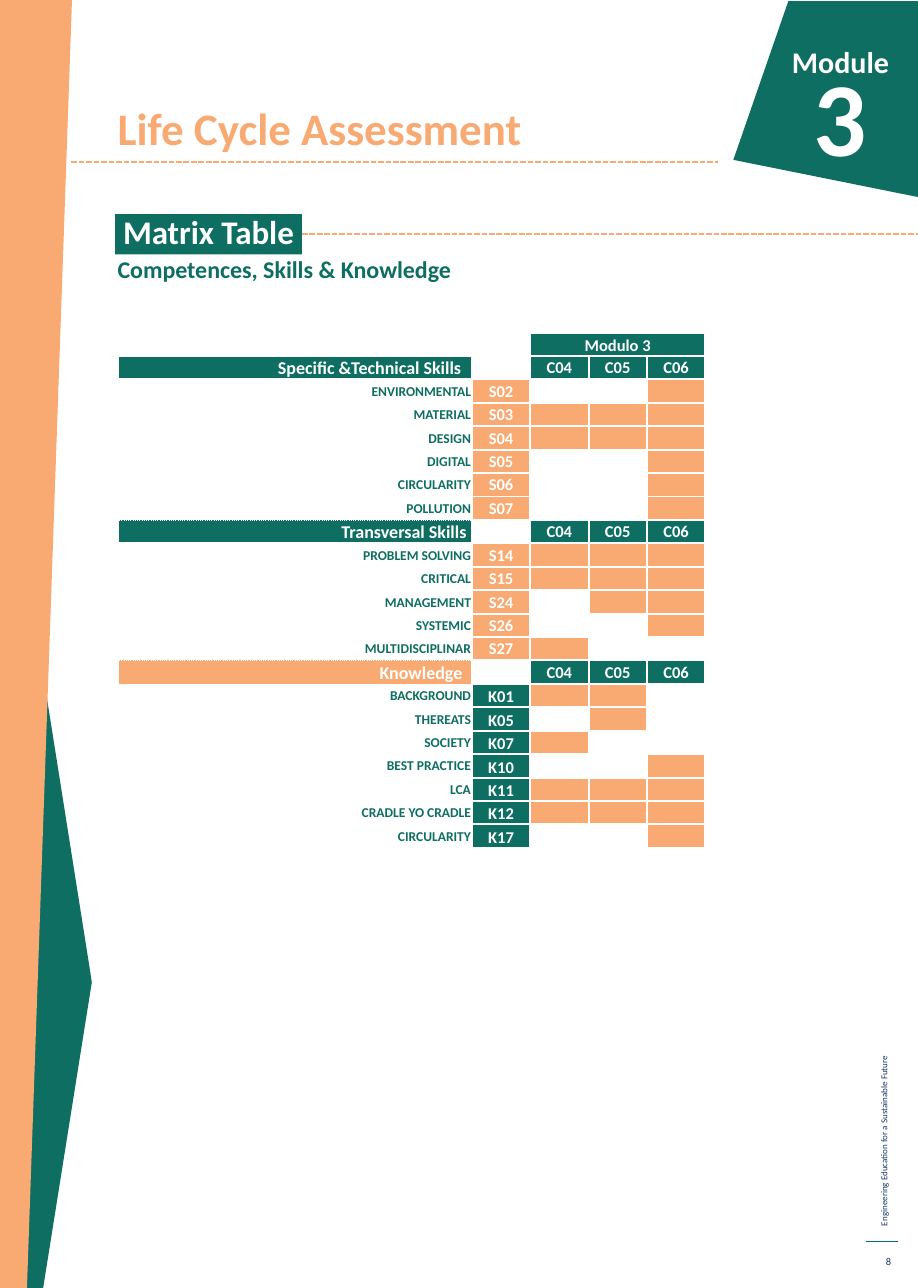
from lxml import etree
from pptx import Presentation
from pptx import util as u
from pptx.dml.color import RGBColor
from pptx.enum import dml, shapes, text
from pptx.oxml import ns

Pt = u.Pt
GREEN = RGBColor(0x0E, 0x6E, 0x61)
ORANGE = RGBColor(0xF9, 0xAA, 0x73)
NAVY = RGBColor(0x1A, 0x39, 0x66)
WHITE = RGBColor(0xFF, 0xFF, 0xFF)
LEFT, CENTER, RIGHT = text.PP_ALIGN.LEFT, text.PP_ALIGN.CENTER, text.PP_ALIGN.RIGHT
TOP, MIDDLE, BOTTOM = text.MSO_ANCHOR.TOP, text.MSO_ANCHOR.MIDDLE, text.MSO_ANCHOR.BOTTOM

COMPETENCES = ["C04", "C05", "C06"]
# Heading, right margin, heading fill, code fill, code anchor, then
# (label, code, one mark per competence: x is covered).
SECTIONS = [
    ("Specific &Technical Skills", 7, GREEN, ORANGE, MIDDLE, [
        ("ENVIRONMENTAL", "S02", "--x"), ("MATERIAL", "S03", "xxx"),
        ("DESIGN", "S04", "xxx"), ("DIGITAL", "S05", "--x"),
        ("CIRCULARITY", "S06", "--x"), ("POLLUTION", "S07", "--x")]),
    ("Transversal Skills", 3.5, GREEN, ORANGE, MIDDLE, [
        ("PROBLEM SOLVING", "S14", "xxx"), ("CRITICAL", "S15", "xxx"),
        ("MANAGEMENT", "S24", "-xx"), ("SYSTEMIC", "S26", "--x"),
        ("MULTIDISCIPLINAR", "S27", "x--")]),
    ("Knowledge", 6.3, ORANGE, GREEN, BOTTOM, [
        ("BACKGROUND", "K01", "xx-"), ("THEREATS", "K05", "-x-"),
        ("SOCIETY", "K07", "x--"), ("BEST PRACTICE", "K10", "--x"),
        ("LCA", "K11", "xxx"), ("CRADLE YO CRADLE", "K12", "xxx"),
        ("CIRCULARITY", "K17", "--x")]),
]


def set_all(target, values):
    for name, value in values.items():
        setattr(target, name, value)


def write(frame, words, size, color, bold=True, align=LEFT, spacing=None):
    para = frame.paragraphs[0]
    set_all(para, {"alignment": align, "line_spacing": spacing})
    span = para.add_run()
    span.text = words
    set_all(span.font, {"name": "Calibri", "size": Pt(size), "bold": bold})
    span.font.color.rgb = color


def add_text(page, box, words, size, color, anchor=TOP, **style):
    label = page.shapes.add_textbox(*map(Pt, box))
    set_all(label.text_frame, {"word_wrap": True, "vertical_anchor": anchor})
    write(label.text_frame, words, size, color, **style)
    return label


def add_outline(page, points, color):
    builder = page.shapes.build_freeform(Pt(points[0][0]), Pt(points[0][1]), scale=1.0)
    builder.add_line_segments([(Pt(x), Pt(y)) for x, y in points[1:]], close=True)
    outline = builder.convert_to_shape()
    paint(outline, color)


def paint(shape, color):
    shape.shadow.inherit = False
    shape.fill.solid()
    shape.fill.fore_color.rgb = color
    shape.line.fill.background()


def add_rule(page, x1, x2, y, color, width, dash=None):
    rule = page.shapes.add_connector(
        shapes.MSO_CONNECTOR.STRAIGHT, Pt(x1), Pt(y), Pt(x2), Pt(y))
    rule.line.color.rgb = color
    set_all(rule.line, {"width": Pt(width), "dash_style": dash})
    etree.SubElement(rule._element.spPr, ns.qn("a:effectLst"))
    return rule


def side_band(page, x, y, width, height):
    right, bottom = x + width, y + height
    add_outline(page, [(x + 28.8, bottom), (x + 16.5, bottom), (x + 16.5, y + 372.2),
                       (x + 59.8, y + 645.8), (x + 61.2, y + 655.2)], GREEN)
    add_outline(page, [(x, y), (right, y), (x + 18, bottom), (x, bottom)], ORANGE)


def header(page, x, y, width, height):
    title = page.shapes.title
    set_all(title, {"left": Pt(x + 71.3), "top": Pt(y + 27.4),
                    "width": Pt(380), "height": Pt(79.2)})
    set_all(title.text_frame, {"vertical_anchor": BOTTOM, "word_wrap": True,
                               "auto_size": text.MSO_AUTO_SIZE.NONE})
    write(title.text_frame, "Life Cycle Assessment", 30, ORANGE, spacing=Pt(26.8))
    add_rule(page, x + 47.5, x + 478.8, y + 108, ORANGE, 1.25, dml.MSO_LINE.SQUARE_DOT)
    right = x + width
    add_outline(page, [(right, y + 0.7), (right - 86.4, y + 0.7),
                       (right - 123.1, y + 106.6), (right, y + height)], GREEN)
    add_text(page, (right - 141.8, y + 25.2, 129.6, 102.2), "Module", 20, WHITE, align=RIGHT)
    add_text(page, (right - 157, y + 31, 129.6, 102.2), "3", 70, WHITE, align=RIGHT)


def section_heading(page, x, y, width, height):
    tag = page.shapes.add_shape(
        shapes.MSO_SHAPE.RECTANGLE, Pt(x), Pt(y), Pt(124.6), Pt(26.8))
    paint(tag, GREEN)
    set_all(tag.text_frame, {
        "word_wrap": False, "vertical_anchor": MIDDLE, "margin_left": 0,
        "margin_right": 0, "margin_top": 0, "margin_bottom": 0})
    write(tag.text_frame, "Matrix Table", 22, WHITE, align=CENTER, spacing=0.9)
    rule = add_rule(page, x + 124.6, x + width, y + 13.4, ORANGE, 1.25,
                    dml.MSO_LINE.SQUARE_DOT)
    rule.begin_connect(tag, 3)
    add_text(page, (x - 5.4, y + height - 24.5, 311, 24.5),
             "Competences, Skills & Knowledge", 16, GREEN, spacing=0.9)


def add_borders(cell, dotted):
    """Draw white borders; those whose side is in dotted are thin dots."""
    properties = cell._tc.get_or_add_tcPr()
    for place, side in enumerate("LRTB"):
        thin = side in dotted
        border = etree.Element(ns.qn("a:ln" + side), w=str(Pt(0.5 if thin else 1.5)))
        fill = etree.SubElement(border, ns.qn("a:solidFill"))
        etree.SubElement(fill, ns.qn("a:srgbClr"), val=str(WHITE))
        etree.SubElement(border, ns.qn("a:prstDash"), val="sysDot" if thin else "solid")
        properties.insert(place, border)


def fill_cell(cell, words="", fill=None, size=11, color=WHITE, align=CENTER,
              anchor=MIDDLE, margin=0.7, dotted=""):
    set_all(cell, {"margin_left": Pt(0.7), "margin_right": Pt(margin),
                   "margin_top": Pt(0.7), "margin_bottom": 0, "vertical_anchor": anchor})
    if fill is None:
        cell.fill.background()
    else:
        cell.fill.solid()
        cell.fill.fore_color.rgb = fill
    if words:
        write(cell.text_frame, words, size, color, align=align)
    else:
        etree.SubElement(cell.text_frame.paragraphs[0]._p, ns.qn("a:endParaRPr"), sz="900")
    add_borders(cell, dotted)


def matrix_rows():
    """Give each row below the top one as the formats of its five cells."""
    above = ""
    for heading, margin, fill, code_fill, anchor, skills in SECTIONS:
        below = "B" if fill == ORANGE else ""
        yield [dict(words=heading, fill=fill, size=12, align=RIGHT, anchor=BOTTOM,
                    margin=margin, dotted=above + below), {},
               *(dict(words=name, fill=GREEN) for name in COMPETENCES)]
        above = "T" if below else ""
        for label, code, marks in skills:
            yield [dict(words=label, size=9, color=GREEN, align=RIGHT, dotted=above + "B"),
                   dict(words=code, fill=code_fill, anchor=anchor),
                   *(dict(fill=ORANGE if mark == "x" else None) for mark in marks)]
            above = "T"


def matrix_table(page, x, y, width, height):
    rows = [[{}, {}, dict(words="Modulo 3", fill=GREEN, anchor=BOTTOM), {}, {}],
            *matrix_rows()]
    code_width = 38.9
    table = page.shapes.add_table(
        len(rows), 5, Pt(x), Pt(y), Pt(width), Pt(height)).table
    set_all(table, {"first_row": False, "horz_banding": False})
    for index, column in enumerate(table.columns):
        column.width = Pt(code_width if index else width - 4 * code_width)
    table.cell(0, 2).merge(table.cell(0, 4))
    for row, formats in zip(table.rows, rows):
        row.height = Pt(height / len(rows))
        for cell, values in zip(row.cells, formats):
            fill_cell(cell, **values)


def footer(page, x, y, width, height):
    length, depth = 323.3, 14.4
    motto = add_text(page, (x + 11.9 - length / 2, y + height - 195.9 - depth / 2,
                            length, depth),
                     "Engineering Education for a Sustainable Future", 6, NAVY, bold=False)
    motto.rotation = 270
    add_rule(page, x, x + 21.6, y + height - 30.9, GREEN, 0.75)
    add_text(page, (x, y + height - 28, width, 20.9), "8", 7, NAVY,
             anchor=MIDDLE, bold=False, align=RIGHT)


def main():
    deck = Presentation()
    set_all(deck, {"slide_width": Pt(612), "slide_height": Pt(859)})
    page = deck.slides.add_slide(deck.slide_layouts[5])
    footer(page, 577.4, 500, 23.8, 359)
    side_band(page, 0, 0, 48, 859)
    matrix_table(page, 78.5, 221.8, 391.7, 343.8)
    section_heading(page, 76.7, 142.8, 535.3, 50.2)
    header(page, 0, 0, 612, 131.4)
    deck.save("out.pptx")


if __name__ == "__main__":
    main()
